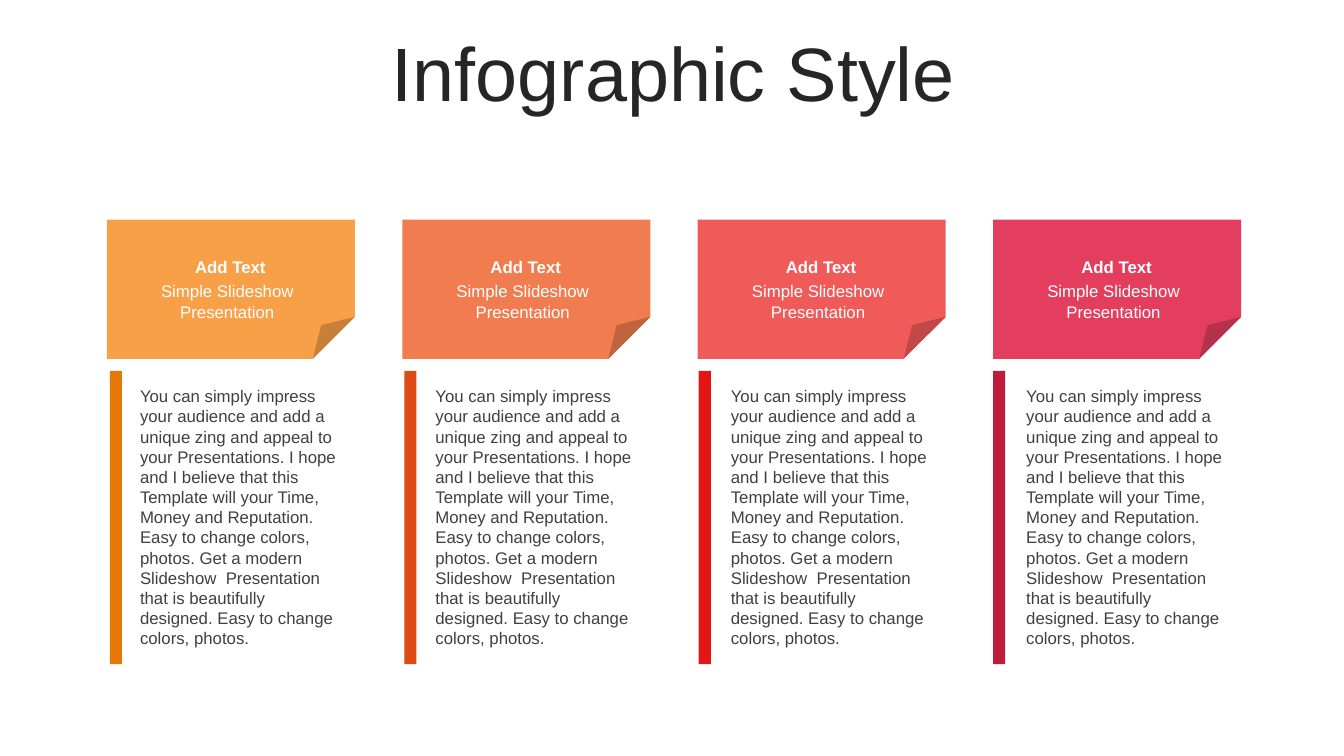
from lxml import etree
from pptx import Presentation
from pptx.dml.color import RGBColor
from pptx.enum.shapes import MSO_SHAPE
from pptx.enum.text import MSO_ANCHOR, MSO_AUTO_SIZE, PP_ALIGN
from pptx.oxml.ns import qn
from pptx.util import Inches, Pt

FOLDED_CORNER = MSO_SHAPE.FOLDED_CORNER
RECTANGLE = MSO_SHAPE.RECTANGLE
MIDDLE = MSO_ANCHOR.MIDDLE
NO_FIT = MSO_AUTO_SIZE.NONE
FIT_SHAPE = MSO_AUTO_SIZE.SHAPE_TO_FIT_TEXT
LEFT = PP_ALIGN.LEFT
CENTER = PP_ALIGN.CENTER

WHITE = RGBColor(0xFF, 0xFF, 0xFF)
TITLE_GRAY = RGBColor(0x26, 0x26, 0x26)
BODY_GRAY = RGBColor(0x40, 0x40, 0x40)
COLUMN_COLORS = [
    (RGBColor(0xF8, 0xA0, 0x47), RGBColor(0xE6, 0x78, 0x09)),
    (RGBColor(0xF0, 0x7C, 0x4F), RGBColor(0xDC, 0x4B, 0x13)),
    (RGBColor(0xF0, 0x5A, 0x59), RGBColor(0xE2, 0x16, 0x14)),
    (RGBColor(0xE4, 0x3E, 0x5F), RGBColor(0xBF, 0x1B, 0x3B)),
]
CARD_STEP = 2.93
BAR_STEP = 2.92
DESCRIPTION = (
    "You can simply impress your audience and add a unique zing and appeal to "
    "your Presentations. I hope and I believe that this Template will your Time, "
    "Money and Reputation. Easy to change colors, photos. Get a modern "
    "Slideshow  Presentation that is beautifully designed. "
    "Easy to change colors, photos."
)

deck = Presentation()
deck.slide_width = Inches(13.33)
deck.slide_height = Inches(7.5)
page = deck.slides.add_slide(deck.slide_layouts[5])


def add_block(preset, left, top, width, height, color):
    block = page.shapes.add_shape(
        preset, Inches(left), Inches(top), Inches(width), Inches(height)
    )
    block.shadow.inherit = False
    block.fill.solid()
    block.fill.fore_color.rgb = color
    block.line.fill.background()
    return block


def write_text(box, text, size, color, align, bold=False):
    box.text_frame.word_wrap = True
    box.text_frame.text = text
    para = box.text_frame.paragraphs[0]
    para.alignment = align
    span = para.runs[0]
    span.font.name = "Arial"
    span.font.size = Pt(size)
    span.font.bold = bold
    span.font.color.rgb = color


title = page.shapes.title
title.left, title.top = Inches(0.35), Inches(0.37)
title.width, title.height = Inches(12.66), Inches(0.79)
write_text(title, "Infographic Style", 54, TITLE_GRAY, CENTER)
title.text_frame.auto_size = NO_FIT
title.text_frame.vertical_anchor = MIDDLE
title.text_frame.paragraphs[0].line_spacing = 0.9

for column, (card_color, bar_color) in enumerate(COLUMN_COLORS):
    offset = column * CARD_STEP
    card = add_block(FOLDED_CORNER, 1.06 + offset, 2.18, 2.46, 1.38, card_color)
    geometry = card.element.spPr.find(qn("a:prstGeom"))
    fold_values = geometry.find(qn("a:avLst"))
    etree.SubElement(fold_values, qn("a:gd"), name="adj", fmla="val 30200")
    add_block(RECTANGLE, 1.09 + column * BAR_STEP, 3.68, 0.12, 2.91, bar_color)

    labels = [
        (1.27, 2.5, 2.03, 0.3, "Add Text", WHITE, CENTER, True),
        (1.24, 2.74, 2.03, 0.5, "Simple Slideshow Presentation", WHITE, CENTER, False),
        (1.29, 3.78, 2.19, 2.73, DESCRIPTION, BODY_GRAY, LEFT, False),
    ]
    for left, top, width, height, text, color, align, bold in labels:
        box = page.shapes.add_textbox(
            Inches(left + offset), Inches(top), Inches(width), Inches(height)
        )
        write_text(box, text, 12, color, align, bold)
        box.text_frame.auto_size = FIT_SHAPE

deck.save("out.pptx")
